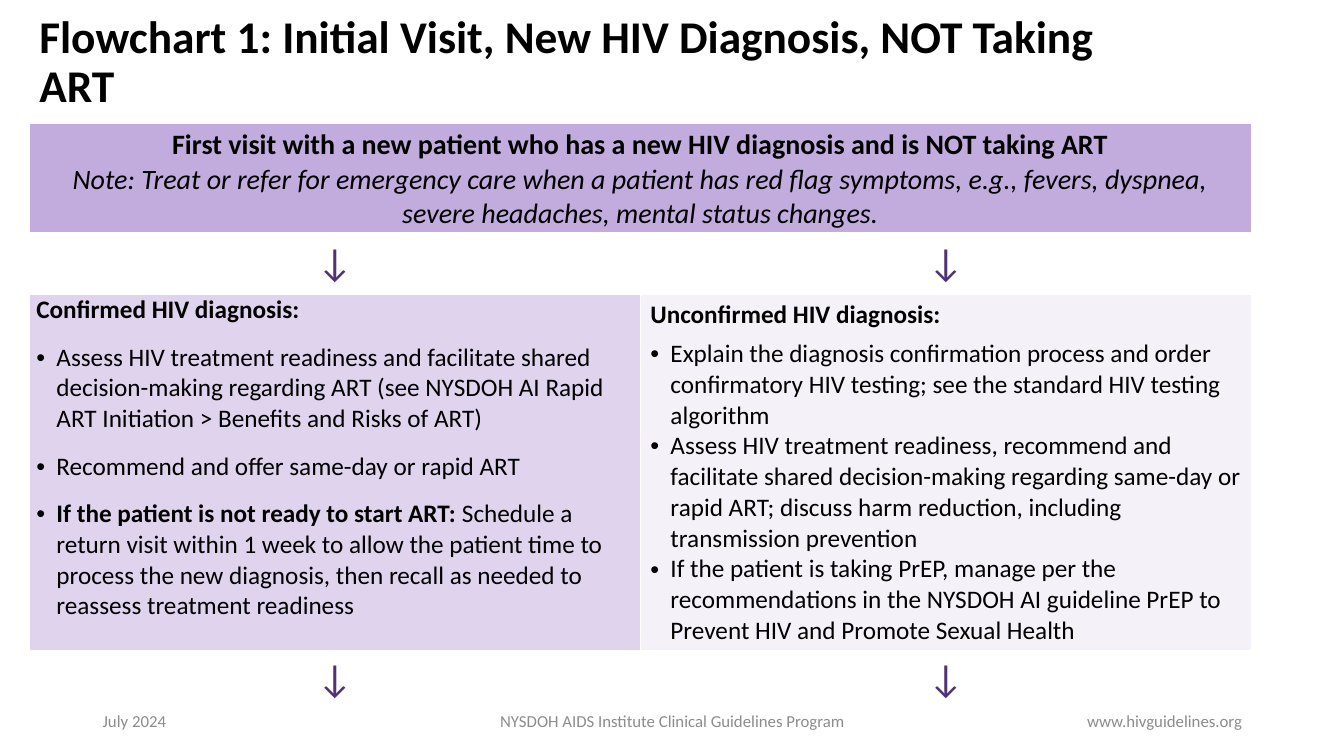
from lxml.etree import SubElement
from pptx import Presentation
from pptx.dml.color import RGBColor
from pptx.enum.text import MSO_ANCHOR as Anchor, MSO_AUTO_SIZE as AutoSize, PP_ALIGN as Align
from pptx.oxml.ns import qn
from pptx.util import Inches, Pt

WIDTH, HEIGHT = 13.33, 7.5
LEFT, TOP = 0.29, 1.22
COLUMN = 6.06
ROWS = [1.1, 0.6, 3.53, 1.01]
INDENT = 0.2

BLACK, GREY, WHITE = "000000", "8C8C8C", "FFFFFF"
PURPLE, HEADER, CONFIRMED, UNCONFIRMED = "523178", "C2ABDD", "DFD3ED", "F5F1F9"

TITLE = "Flowchart 1: Initial Visit, New HIV Diagnosis, NOT Taking ART"
FIRST_VISIT = "First visit with a new patient who has a new HIV diagnosis and is NOT taking ART"
RED_FLAGS = ("Note: Treat or refer for emergency care when a patient has red flag symptoms, "
             "e.g., fevers, dyspnea, severe headaches, mental status changes.")
CONFIRMED_STEPS = [
    [("Assess HIV treatment readiness and facilitate shared decision-making regarding ART "
      "(see NYSDOH AI Rapid ART Initiation > Benefits and Risks of ART)", False)],
    [("Recommend and offer same-day or rapid ART", False)],
    [("If the patient is not ready to start ART:", True),
     (" Schedule a return visit within 1 week to allow the patient time to process the new "
      "diagnosis, then recall as needed to reassess treatment readiness", False)],
]
UNCONFIRMED_STEPS = [
    [("Explain the diagnosis confirmation process and order confirmatory HIV testing; "
      "see the standard HIV testing algorithm", False)],
    [("Assess HIV treatment readiness, recommend and facilitate shared decision-making regarding "
      "same-day or rapid ART; discuss harm reduction, including transmission prevention", False)],
    [("If the patient is taking PrEP, manage per the recommendations in the NYSDOH AI guideline "
      "PrEP to Prevent HIV and Promote Sexual Health", False)],
]
FOOTERS = [
    ("July 2024", 0.92, 3, Align.LEFT),
    ("NYSDOH AIDS Institute Clinical Guidelines Program", 4.42, 4.5, Align.CENTER),
    ("www.hivguidelines.org", 9.42, 3, Align.RIGHT),
]


def color(code):
    return RGBColor.from_string(code)


def apply(target, formats):
    for name, value in formats.items():
        setattr(target, name, value)


def add_run(paragraph, text, size, code=BLACK, **formats):
    run = paragraph.add_run()
    run.text = text
    apply(run.font, {"name": "Calibri", "size": Pt(size), "bold": False, **formats})
    run.font.color.rgb = color(code)


def add_bullet(paragraph):
    props = paragraph._p.get_or_add_pPr()
    props.set("marL", str(Inches(INDENT)))
    props.set("indent", str(-Inches(INDENT)))
    SubElement(props, qn("a:buFont"), typeface="Arial")
    SubElement(props, qn("a:buChar"), char="•")


def set_borders(cell, bottom=1):
    props = cell._tc.get_or_add_tcPr()
    for side, points in {"L": 1, "R": 1, "T": 1, "B": bottom}.items():
        line = SubElement(props, qn(f"a:ln{side}"), w=str(Pt(points)))
        fill = SubElement(line, qn("a:solidFill"))
        SubElement(fill, qn("a:srgbClr"), val=WHITE)


def fill_cell(cell, code):
    cell.fill.solid()
    cell.fill.fore_color.rgb = color(code)


def add_title(slide):
    title = slide.shapes.title
    apply(title, {"left": Inches(LEFT), "top": Inches(0.26),
                  "width": Inches(11.02), "height": Inches(0.74)})
    apply(title.text_frame, {"vertical_anchor": Anchor.MIDDLE, "word_wrap": True,
                             "auto_size": AutoSize.NONE})
    heading = title.text_frame.paragraphs[0]
    apply(heading, {"alignment": Align.LEFT, "line_spacing": 0.9})
    add_run(heading, TITLE, 32.4, bold=True)


def add_footer(slide, text, left, width, alignment):
    footer = slide.shapes.add_textbox(Inches(left), Inches(6.95), Inches(width), Inches(0.4))
    apply(footer.text_frame, {"word_wrap": True, "vertical_anchor": Anchor.MIDDLE})
    line = footer.text_frame.paragraphs[0]
    line.alignment = alignment
    add_run(line, text, 12, GREY)


def write_header(cell):
    fill_cell(cell, HEADER)
    visit = cell.text_frame.paragraphs[0]
    note = cell.text_frame.add_paragraph()
    visit.alignment = note.alignment = Align.CENTER
    add_run(visit, FIRST_VISIT, 20, bold=True)
    add_run(note, RED_FLAGS, 20, italic=True)


def write_arrow(cell):
    cell.fill.background()
    arrow = cell.text_frame.paragraphs[0]
    arrow.alignment = Align.CENTER
    add_run(arrow, "↓", 28, PURPLE)


def write_branch(cell, heading, steps, code, gap):
    fill_cell(cell, code)
    diagnosis = cell.text_frame.paragraphs[0]
    diagnosis.space_after = Pt(6)
    add_run(diagnosis, heading, 18, bold=True)
    for step in steps:
        item = cell.text_frame.add_paragraph()
        apply(item, {"space_before": Pt(gap), "space_after": Pt(gap)})
        add_bullet(item)
        for text, bold in step:
            add_run(item, text, 18, bold=bold)


def add_flowchart(slide):
    chart = slide.shapes.add_table(len(ROWS), 2, Inches(LEFT), Inches(TOP),
                                   Inches(2 * COLUMN), Inches(sum(ROWS))).table
    apply(chart, {"first_row": False, "horz_banding": False})
    for column in chart.columns:
        column.width = Inches(COLUMN)
    for row, (band, height) in enumerate(zip(chart.rows, ROWS)):
        band.height = Inches(height)
        for cell in band.cells:
            set_borders(cell, bottom=1 if row else 3)

    chart.cell(0, 0).merge(chart.cell(0, 1))
    write_header(chart.cell(0, 0))
    for row in (1, 3):
        for column in range(2):
            write_arrow(chart.cell(row, column))
    confirmed, unconfirmed = chart.cell(2, 0), chart.cell(2, 1)
    apply(confirmed, {"margin_left": Inches(0.07), "margin_right": Inches(0.07),
                      "margin_top": 0, "margin_bottom": 0})
    write_branch(confirmed, "Confirmed HIV diagnosis:", CONFIRMED_STEPS, CONFIRMED, 6)
    write_branch(unconfirmed, "Unconfirmed HIV diagnosis:", UNCONFIRMED_STEPS, UNCONFIRMED, 0)


def main():
    deck = Presentation()
    apply(deck, {"slide_width": Inches(WIDTH), "slide_height": Inches(HEIGHT)})
    slide = deck.slides.add_slide(deck.slide_layouts[5])
    add_title(slide)
    for footer in FOOTERS:
        add_footer(slide, *footer)
    add_flowchart(slide)
    deck.save("out.pptx")


if __name__ == "__main__":
    main()
